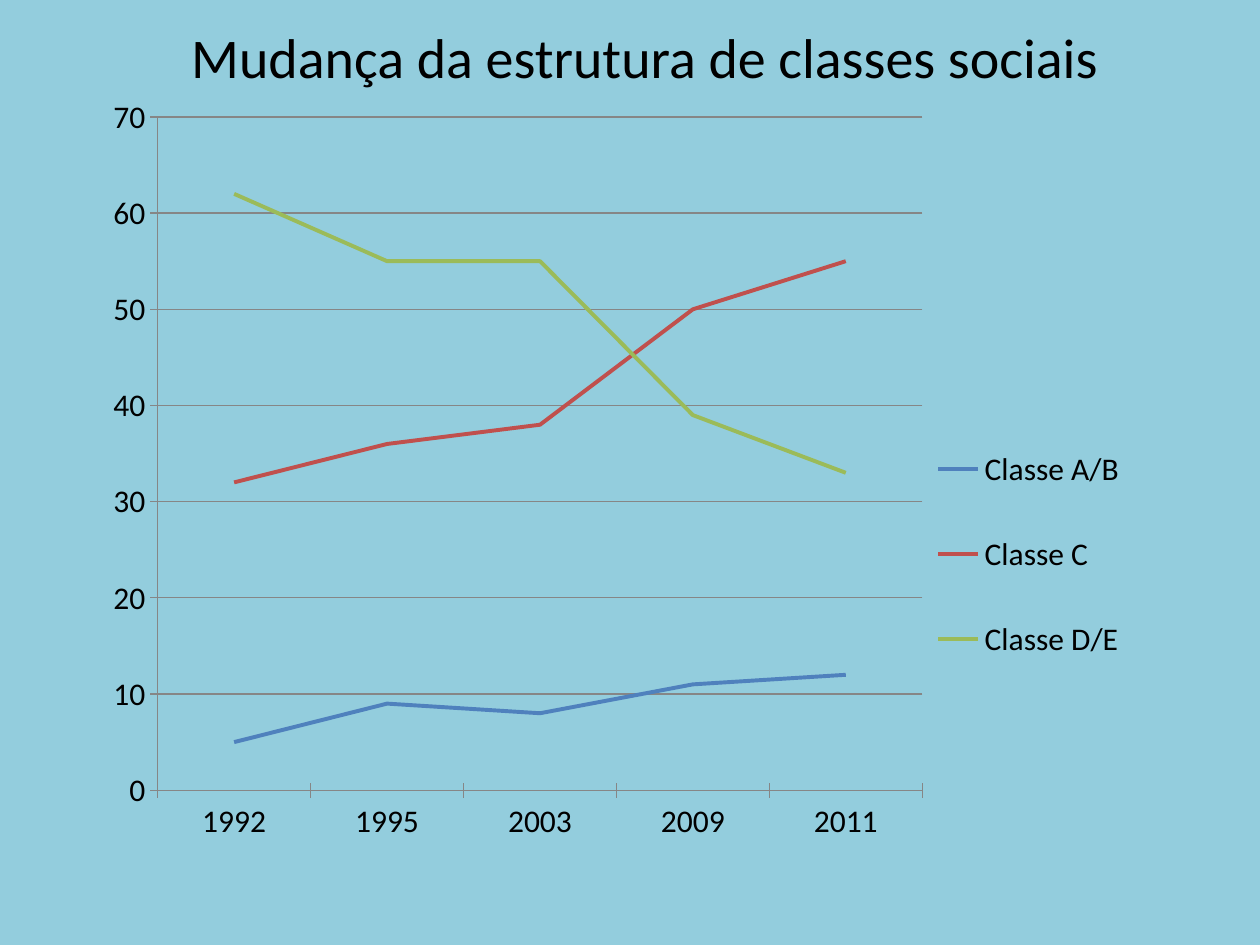
import pptx
import pptx.chart.data
import pptx.dml.color
import pptx.enum.chart
import pptx.enum.text
import pptx.oxml
import pptx.oxml.ns
import pptx.util

RGBColor = pptx.dml.color.RGBColor
BACKGROUND = RGBColor(0x93, 0xCD, 0xDD)
BLACK = RGBColor(0, 0, 0)
GREY = RGBColor(0x86, 0x86, 0x86)
BLUE = RGBColor(0x4F, 0x81, 0xBD)
RED = RGBColor(0xC0, 0x50, 0x4D)
GREEN = RGBColor(0x9B, 0xBB, 0x59)

FONT = "Calibri"
PX_PER_INCH = 126
YEARS = ["1992", "1995", "2003", "2009", "2011"]
CLASSES = [
    ("Classe A/B", [5, 9, 8, 11, 12], BLUE),
    ("Classe C", [32, 36, 38, 50, 55], RED),
    ("Classe D/E", [62, 55, 55, 39, 33], GREEN),
]


def px(length):
    return pptx.util.Emu(length * 914400 // PX_PER_INCH)


def style_font(font, size):
    font.name = FONT
    font.size = pptx.util.Pt(size)
    font.color.rgb = BLACK


def style_line(line, color, width):
    line.color.rgb = color
    line.width = pptx.util.Pt(width)


def add_title(slide, text, left, top, width, height):
    title = slide.shapes.title
    title.left, title.top = px(left), px(top)
    title.width, title.height = px(width), px(height)
    frame = title.text_frame
    frame.text = text
    frame.word_wrap = True
    frame.auto_size = pptx.enum.text.MSO_AUTO_SIZE.NONE
    frame.vertical_anchor = pptx.enum.text.MSO_ANCHOR.MIDDLE
    heading = frame.paragraphs[0]
    heading.alignment = pptx.enum.text.PP_ALIGN.CENTER
    style_font(heading.runs[0].font, 32)
    title.element.getparent().append(title.element)


def set_layout(parent, predecessor, x, y, w, h, inner=False):
    for old in parent.findall(pptx.oxml.ns.qn("c:layout")):
        parent.remove(old)
    target = '<c:layoutTarget val="inner"/>' if inner else ""
    layout = pptx.oxml.parse_xml(
        f'<c:layout {pptx.oxml.ns.nsdecls("c")}><c:manualLayout>{target}'
        '<c:xMode val="edge"/><c:yMode val="edge"/>'
        f'<c:x val="{x}"/><c:y val="{y}"/><c:w val="{w}"/><c:h val="{h}"/>'
        "</c:manualLayout></c:layout>"
    )
    if predecessor is None:
        parent.insert(0, layout)
    else:
        predecessor.addnext(layout)


def style_axes(chart):
    for axis in (chart.category_axis, chart.value_axis):
        axis.major_tick_mark = pptx.enum.chart.XL_TICK_MARK.CROSS
        axis.minor_tick_mark = pptx.enum.chart.XL_TICK_MARK.NONE
        style_line(axis.format.line, GREY, 0.75)
    values = chart.value_axis
    values.minimum_scale, values.maximum_scale, values.major_unit = 0, 70, 10
    values.has_major_gridlines = True
    style_line(values.major_gridlines.format.line, GREY, 0.75)


def add_line_chart(slide, left, top, width, height):
    shares = pptx.chart.data.CategoryChartData()
    shares.categories = YEARS
    for name, values, _ in CLASSES:
        shares.add_series(name, values)
    chart = slide.shapes.add_chart(
        pptx.enum.chart.XL_CHART_TYPE.LINE,
        px(left), px(top), px(width), px(height), shares,
    ).chart
    chart.has_title = False
    style_font(chart.font, 18)
    style_axes(chart)

    plot = chart.plots[0]
    plot.vary_by_categories = False
    for series, (_, _, color) in zip(plot.series, CLASSES):
        series.smooth = False
        series.marker.style = pptx.enum.chart.XL_MARKER_STYLE.NONE
        style_line(series.format.line, color, 2.25)

    chart.has_legend = True
    legend = chart.legend
    legend.position = pptx.enum.chart.XL_LEGEND_POSITION.RIGHT
    legend.include_in_layout = False
    style_font(legend.font, 18)
    legend_xml = chart.element.find(".//" + pptx.oxml.ns.qn("c:legend"))
    position = legend_xml.find(pptx.oxml.ns.qn("c:legendPos"))
    set_layout(legend_xml, position, 0.78, 0.41, 0.2, 0.39)
    plot_area = chart.element.find(".//" + pptx.oxml.ns.qn("c:plotArea"))
    set_layout(plot_area, None, 0.06, 0.04, 0.72, 0.87, inner=True)


def main():
    presentation = pptx.Presentation()
    presentation.slide_width, presentation.slide_height = px(1260), px(945)
    slide = presentation.slides.add_slide(presentation.slide_layouts[5])
    slide.background.fill.solid()
    slide.background.fill.fore_color.rgb = BACKGROUND
    add_line_chart(slide, 94, 86, 1062, 774)
    add_title(slide, "Mudança da estrutura de classes sociais", 64, 27, 1162, 58)
    presentation.save("out.pptx")


if __name__ == "__main__":
    main()
